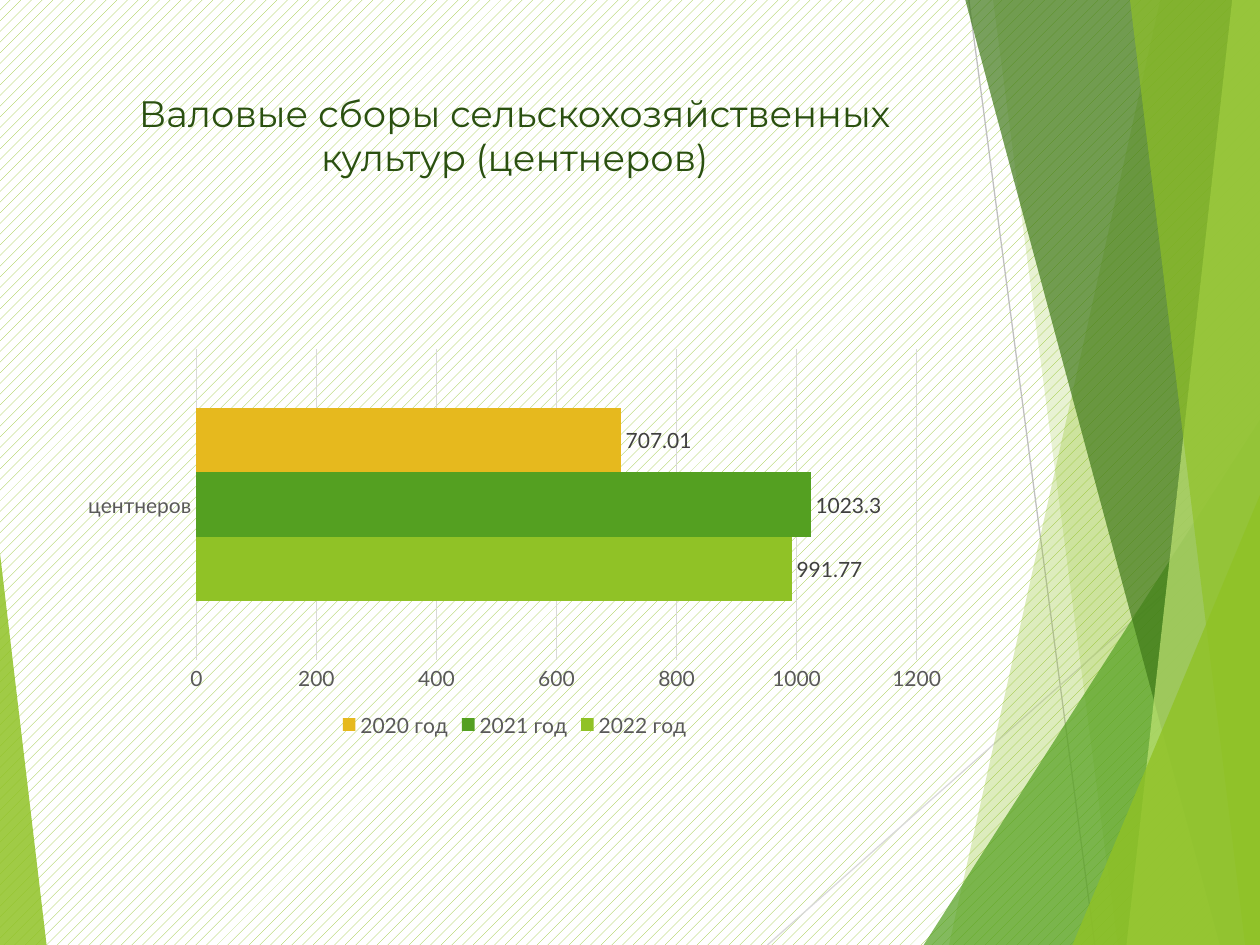
import pptx
import pptx.chart.data
import pptx.dml.color
import pptx.enum.chart
import pptx.enum.dml
import pptx.enum.shapes
import pptx.enum.text
import pptx.oxml
import pptx.oxml.ns
import pptx.util
from lxml import etree

Cm, Pt = pptx.util.Cm, pptx.util.Pt
COLORS = {
    "lime": "90C226", "green": "54A021", "dark": "3F7819", "pale": "C0E474",
    "gold": "E6B91E", "title": "2A5010", "axis": "595959", "label": "404040",
    "line": "BFBFBF", "grid": "D9D9D9", "white": "FFFFFF", "black": "000000",
}


def rgb(name):
    return pptx.dml.color.RGBColor.from_string(COLORS[name])


def set_font(font, name, size, color):
    font.name, font.size, font.bold = name, Pt(size), False
    font.color.rgb = rgb(color)


def paint(sp, color, opacity):
    """Fill a shape with a translucent colour, without line or shadow."""
    sp.shadow.inherit = False
    sp.line.fill.background()
    sp.fill.solid()
    sp.fill.fore_color.rgb = rgb(color)
    clr = sp.fill._xPr.find(".//" + pptx.oxml.ns.qn("a:srgbClr"))
    etree.SubElement(clr, pptx.oxml.ns.qn("a:alpha"), val=str(opacity * 1000))


def add_background(slide):
    fill = slide.background.fill
    fill.patterned()
    fill.pattern = pptx.enum.dml.MSO_PATTERN.PERCENT_20
    fill.fore_color.rgb = rgb("lime")
    fill.back_color.rgb = rgb("white")


def add_facets(slide, left, top, width, height):
    """Overlapping translucent facets along the sides of the box."""
    right, bottom = left + width, top + height

    def line(x1, y1, x2, y2, color):
        cn = slide.shapes.add_connector(
            pptx.enum.shapes.MSO_CONNECTOR.STRAIGHT,
            Cm(left + x1), Cm(top + y1), Cm(left + x2), Cm(top + y2))
        cn.line.color.rgb = rgb(color)
        cn.line.width = Pt(0.75)
        etree.SubElement(cn._element.spPr, pptx.oxml.ns.qn("a:effectLst"))

    def pane(x_top, x_bottom, color, opacity):
        """Slanted left edge, the rest reaching the right side of the box."""
        fb = slide.shapes.build_freeform(Cm(left + x_top), Cm(top))
        fb.add_line_segments([(Cm(right), Cm(top)), (Cm(right), Cm(bottom)),
                              (Cm(left + x_bottom), Cm(bottom))])
        paint(fb.convert_to_shape(), color, opacity)

    def corner(x, y, w, apex, color, opacity):
        """Right triangle standing on the bottom of the box."""
        sp = slide.shapes.add_shape(
            pptx.enum.shapes.MSO_SHAPE.ISOSCELES_TRIANGLE,
            Cm(left + x), Cm(top + y), Cm(w), Cm(height - y))
        sp.adjustments[0] = apex
        paint(sp, color, opacity)

    line(19.53, 0, 22.07, height, "line")
    line(width, 10.24, 15.47, height, "grid")
    pane(23.39, 19.13, "lime", 30)
    pane(20.02, 22.53, "lime", 20)
    corner(18.62, 8.46, width - 18.62, 1, "green", 72)
    pane(19.46, 24.59, "dark", 70)
    pane(24.84, 22.71, "pale", 70)
    pane(22.78, 25.1, "lime", 65)
    corner(21.62, 9.98, width - 21.62, 1, "lime", 80)
    corner(0, 11.15, 0.94, 0, "lime", 85)


def add_title(slide, left, top, width, height):
    tb = slide.shapes.add_textbox(Cm(left), Cm(top), Cm(width), Cm(height))
    tf = tb.text_frame
    tf.word_wrap = True
    tf.vertical_anchor = pptx.enum.text.MSO_ANCHOR.TOP
    p = tf.paragraphs[0]
    p.alignment = pptx.enum.text.PP_ALIGN.CENTER
    r = p.add_run()
    r.text = "Валовые сборы сельскохозяйственных культур (центнеров)"
    set_font(r.font, "Montserrat", 21, "title")


def add_harvest_chart(slide, left, top, width, height):
    harvests = [("2022 год", 991.77, "lime"), ("2021 год", 1023.3, "green"),
                ("2020 год", 707.01, "gold")]
    data = pptx.chart.data.CategoryChartData()
    data.categories = ["центнеров"]
    for name, value, _ in harvests:
        data.add_series(name, [value])
    chart = slide.shapes.add_chart(
        pptx.enum.chart.XL_CHART_TYPE.BAR_CLUSTERED,
        Cm(left), Cm(top), Cm(width), Cm(height), data).chart
    chart.has_title = False
    set_font(chart.font, "Lato", 10, "black")

    # Bars and their labels
    plot = chart.plots[0]
    plot.gap_width, plot.overlap = 182, 0
    plot.vary_by_categories = False
    for series, (_, _, color) in zip(plot.series, harvests):
        series.format.fill.solid()
        series.format.fill.fore_color.rgb = rgb(color)
        labels = series.data_labels
        labels.show_value = True
        labels.position = pptx.enum.chart.XL_LABEL_POSITION.OUTSIDE_END
        set_font(labels.font, "Lato", 12, "label")

    # Axes
    for axis in (chart.category_axis, chart.value_axis):
        axis.major_tick_mark = pptx.enum.chart.XL_TICK_MARK.NONE
        axis.minor_tick_mark = pptx.enum.chart.XL_TICK_MARK.NONE
        set_font(axis.tick_labels.font, "Lato", 12, "axis")
    values = chart.value_axis
    values.minimum_scale, values.maximum_scale, values.major_unit = 0, 1200, 200
    values.format.line.fill.background()
    values.has_major_gridlines = True
    for fmt in (chart.category_axis.format, values.major_gridlines.format):
        fmt.line.color.rgb = rgb("grid")
        fmt.line.width = Pt(0.75)

    # Legend
    chart.has_legend = True
    chart.legend.position = pptx.enum.chart.XL_LEGEND_POSITION.BOTTOM
    chart.legend.include_in_layout = False
    set_font(chart.legend.font, "Lato", 12, "axis")


def main():
    prs = pptx.Presentation()
    prs.slide_width, prs.slide_height = Cm(25.4), Cm(19.05)
    slide = prs.slides.add_slide(prs.slide_layouts[6])
    add_background(slide)
    add_facets(slide, 0, 0, 25.4, 19.05)
    add_title(slide, 1.42, 1.7, 17.91, 3.66)
    add_harvest_chart(slide, 1.42, 6.88, 17.91, 8.08)
    prs.save("out.pptx")


if __name__ == "__main__":
    main()
